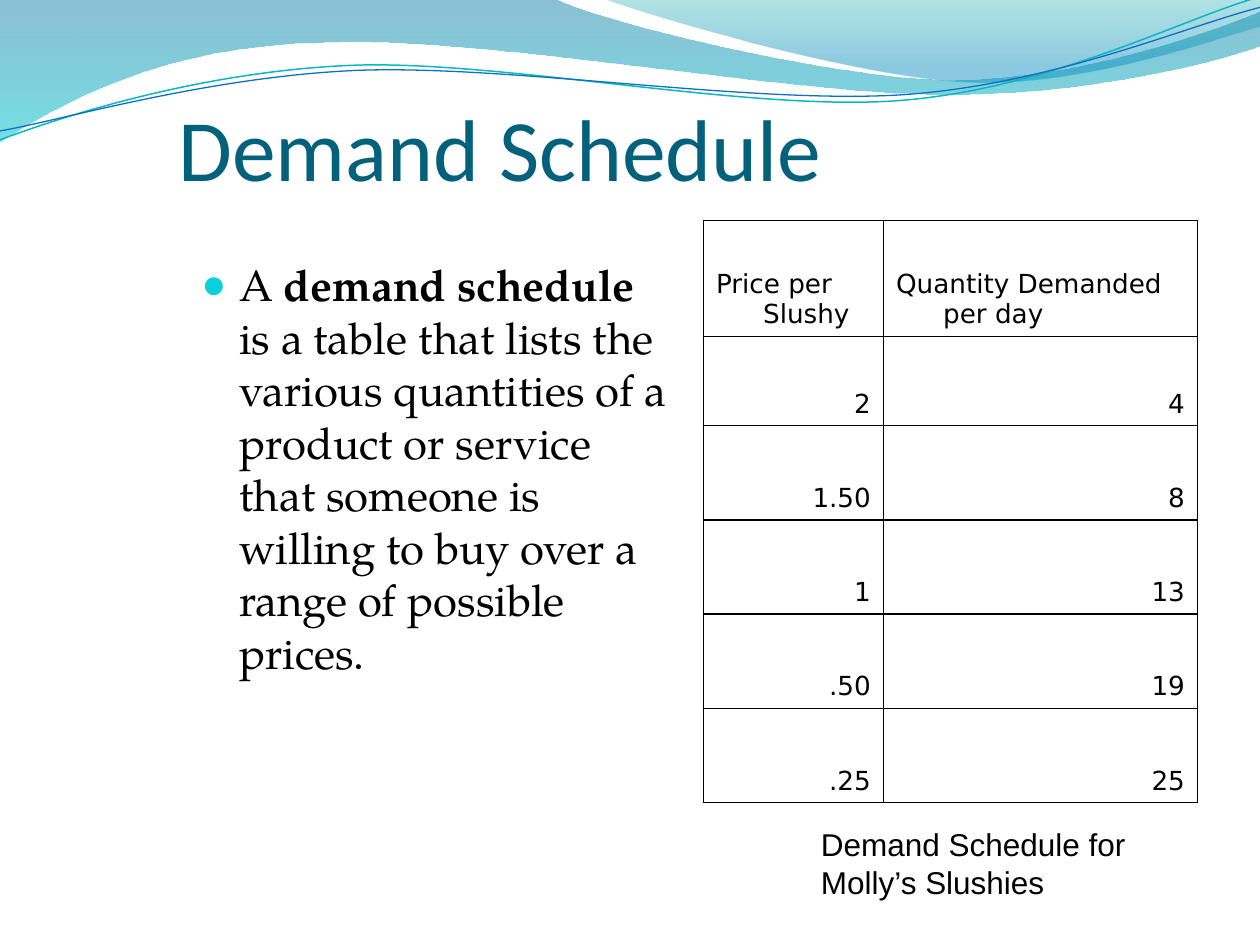
from pptx import Presentation
from pptx.dml.color import RGBColor
from pptx.enum.text import MSO_ANCHOR as Anchor, PP_ALIGN as Align
from pptx.oxml import parse_xml
from pptx.oxml.ns import nsdecls, qn
from pptx.oxml.xmlchemy import OxmlElement
from pptx.util import Cm, Pt

BLACK = RGBColor(0x00, 0x00, 0x00)
TITLE_TEAL = RGBColor(0x04, 0x61, 0x7B)
BULLET_CYAN = RGBColor(0x0B, 0xD0, 0xD9)
LINE_TEAL = RGBColor(0x0A, 0xB8, 0xBF)
LINE_BLUE = RGBColor(0x0F, 0x6F, 0xC6)
DEEP_BLUE = RGBColor(0x00, 0x74, 0xA1)
AQUA = RGBColor(0x00, 0xC6, 0xCF)
SEA_GREEN = RGBColor(0x00, 0xA1, 0xA9)
SKY_BLUE = RGBColor(0x00, 0x8B, 0xBF)

# Outlines in cm: a pair is a straight step, six numbers are a Bezier curve.
LONG_WAVE = [
    (0, -0.03), (11.18, -0.03),
    (12.09, 0.43, 16.87, 1.6, 19.25, 1.6),
    (21.67, 1.6, 24.33, 0.66, 25.4, 0.23), (25.43, 0.91),
    (24.97, 1.12, 22.1, 1.93, 18.95, 1.9),
    (15.8, 1.9, 9.7, 0.71, 6.53, 0.86),
    (3.28, 0.89, 1.17, 2.11, -0.03, 2.87), (0, -0.03),
]
RIGHT_WAVE = [
    (12.17, -0.03),
    (12.93, 0.28, 17.32, 1.57, 19.53, 1.65),
    (21.74, 1.75, 24.41, 0.81, 25.4, 0.53), (25.4, 0), (12.17, -0.03),
]
TEAL_CURVE = [
    (0, 2.82),
    (1.22, 2.36, 4.01, 1.45, 7.04, 1.32),
    (10.03, 1.19, 15.06, 2.26, 18.11, 2.03),
    (21.16, 1.8, 23.83, 0.38, 25.35, -0.05),
]
BLUE_CURVE = [
    (0, 2.64),
    (1.19, 2.44, 4.17, 1.55, 7.19, 1.42),
    (10.24, 1.3, 15.16, 2.11, 18.21, 1.91),
    (21.23, 1.7, 23.9, 0.53, 25.4, 0.15),
]

DEMAND = [
    ("Price per Slushy", "Quantity Demanded per day"),
    ("2", "4"), ("1.50", "8"), ("1", "13"), (".50", "19"), (".25", "25"),
]
COLUMN_WIDTHS = [Cm(3.63), Cm(6.33)]
ROW_HEIGHTS = [Cm(2.33), Cm(1.8)] + [Cm(1.9)] * 4


def add_outline(slide, steps, closed):
    """Join the end points of the steps, then bend the curved ones."""
    start, *ends = [(Cm(step[-2]), Cm(step[-1])) for step in steps]
    builder = slide.shapes.build_freeform(*start)
    builder.add_line_segments(ends, close=closed)
    outline = builder.convert_to_shape()
    outline.shadow.inherit = False
    segments = list(outline._element.spPr.iter(qn("a:lnTo")))
    for segment, step in zip(segments, steps[1:]):
        if len(step) == 6:
            bend(segment, step, outline.left, outline.top)
    return outline


def bend(segment, step, left, top):
    """Replace a straight segment by a Bezier curve."""
    curve = OxmlElement("a:cubicBezTo")
    for x, y in zip(step[::2], step[1::2]):
        point = OxmlElement("a:pt")
        point.set("x", str(Cm(x) - left))
        point.set("y", str(Cm(y) - top))
        curve.append(point)
    segment.getparent().replace(segment, curve)


def add_wave(slide, steps, stops):
    """Add a wave with a see-through gradient; stops are (position, colour, opacity %)."""
    wave = add_outline(slide, steps, True)
    wave.line.fill.background()
    wave.fill.gradient()
    wave.fill.gradient_angle = 270
    for stop, (position, color, _) in zip(wave.fill.gradient_stops, stops):
        stop.position = position
        stop.color.rgb = color
    colors = wave._element.spPr.iter(qn("a:srgbClr"))
    for color, (_, _, opacity) in zip(list(colors), stops):
        alpha = OxmlElement("a:alpha")
        alpha.set("val", str(opacity * 1000))
        color.append(alpha)


def add_curve(slide, steps, color, width):
    curve = add_outline(slide, steps, False)
    curve.fill.background()
    curve.line.color.rgb = color
    curve.line.width = width


def add_run(paragraph, text, font, size, color=BLACK, bold=False):
    run = paragraph.add_run()
    run.text = text
    run.font.color.rgb = color
    for key, value in {"name": font, "size": size, "bold": bold}.items():
        setattr(run.font, key, value)


def add_text(slide, box, runs, space_before=Pt(0), **frame_format):
    """Add a wrapped one-paragraph text box and return its paragraph."""
    frame = slide.shapes.add_textbox(*box).text_frame
    for key, value in {"word_wrap": True, **frame_format}.items():
        setattr(frame, key, value)
    paragraph = frame.paragraphs[0]
    paragraph.space_before = space_before
    for run in runs:
        add_run(paragraph, **run)
    return paragraph


def hang(paragraph, indent):
    properties = paragraph._p.get_or_add_pPr()
    properties.set("marL", str(indent))
    properties.set("indent", str(-indent))
    return properties


def add_bullet(paragraph, indent):
    properties = hang(paragraph, indent)
    for xml in (
        f'<a:buClr {nsdecls("a")}><a:srgbClr val="{BULLET_CYAN}"/></a:buClr>',
        f'<a:buSzPct {nsdecls("a")} val="95000"/>',
        f'<a:buFont {nsdecls("a")} typeface="Arial"/>',
        f'<a:buChar {nsdecls("a")} char="●"/>',
    ):
        properties.append(parse_xml(xml))


def add_borders(cell):
    properties = cell._tc.get_or_add_tcPr()
    for side in ("lnL", "lnR", "lnT", "lnB"):
        properties.append(parse_xml(
            f'<a:{side} {nsdecls("a")} w="{Pt(1)}"><a:solidFill>'
            f'<a:srgbClr val="{BLACK}"/></a:solidFill></a:{side}>'))


def add_demand_table(slide):
    table = slide.shapes.add_table(
        len(DEMAND), len(COLUMN_WIDTHS), Cm(14.18), Cm(4.45),
        sum(COLUMN_WIDTHS), sum(ROW_HEIGHTS)).table
    table.first_row = table.horz_banding = False
    for column, width in zip(table.columns, COLUMN_WIDTHS):
        column.width = width
    for r, (height, texts) in enumerate(zip(ROW_HEIGHTS, DEMAND)):
        table.rows[r].height = height
        for c, text in enumerate(texts):
            cell = table.cell(r, c)
            add_borders(cell)
            cell.fill.background()
            cell.vertical_anchor = Anchor.BOTTOM
            paragraph = cell.text_frame.paragraphs[0]
            paragraph.alignment = Align.RIGHT if r else Align.LEFT
            hang(paragraph, Cm(0.95))
            add_run(paragraph, text, "DejaVu Sans", Pt(15))


def main():
    deck = Presentation()
    deck.slide_width, deck.slide_height = Cm(25.4), Cm(19.05)
    slide = deck.slides.add_slide(deck.slide_layouts[6])

    add_wave(slide, LONG_WAVE, [(0, DEEP_BLUE, 45), (1, AQUA, 55)])
    add_wave(slide, RIGHT_WAVE, [(0, SEA_GREEN, 30), (0.8, SKY_BLUE, 45)])
    add_curve(slide, TEAL_CURVE, LINE_TEAL, Pt(0.85))
    add_curve(slide, BLUE_CURVE, LINE_BLUE, Pt(0.75))

    add_text(slide, (Cm(3.6), Cm(0.84), Cm(20.32), Cm(3.18)),
             [dict(text="Demand Schedule", font="Calibri", size=Pt(50), color=TITLE_TEAL)],
             vertical_anchor=Anchor.BOTTOM, margin_left=0, margin_right=0, margin_bottom=0)

    body = dict(font="TeX Gyre Pagella", size=Pt(25))
    definition = add_text(slide, (Cm(3.81), Cm(5.08), Cm(9.96), Cm(11.43)), [
        dict(text="A ", **body),
        dict(text="demand schedule", bold=True, **body),
        dict(text=" is a table that lists the various quantities of a product or "
                  "service that someone is willing to buy over a range of possible prices.",
             **body),
    ], space_before=Pt(5))
    add_bullet(definition, Cm(0.76))

    add_demand_table(slide)
    add_text(slide, (Cm(16.3), Cm(16.51), Cm(6.78), Cm(1.78)),
             [dict(text="Demand Schedule for Molly’s Slushies", font="Arial", size=Pt(18))],
             space_before=Pt(9))
    deck.save("out.pptx")


if __name__ == "__main__":
    main()
